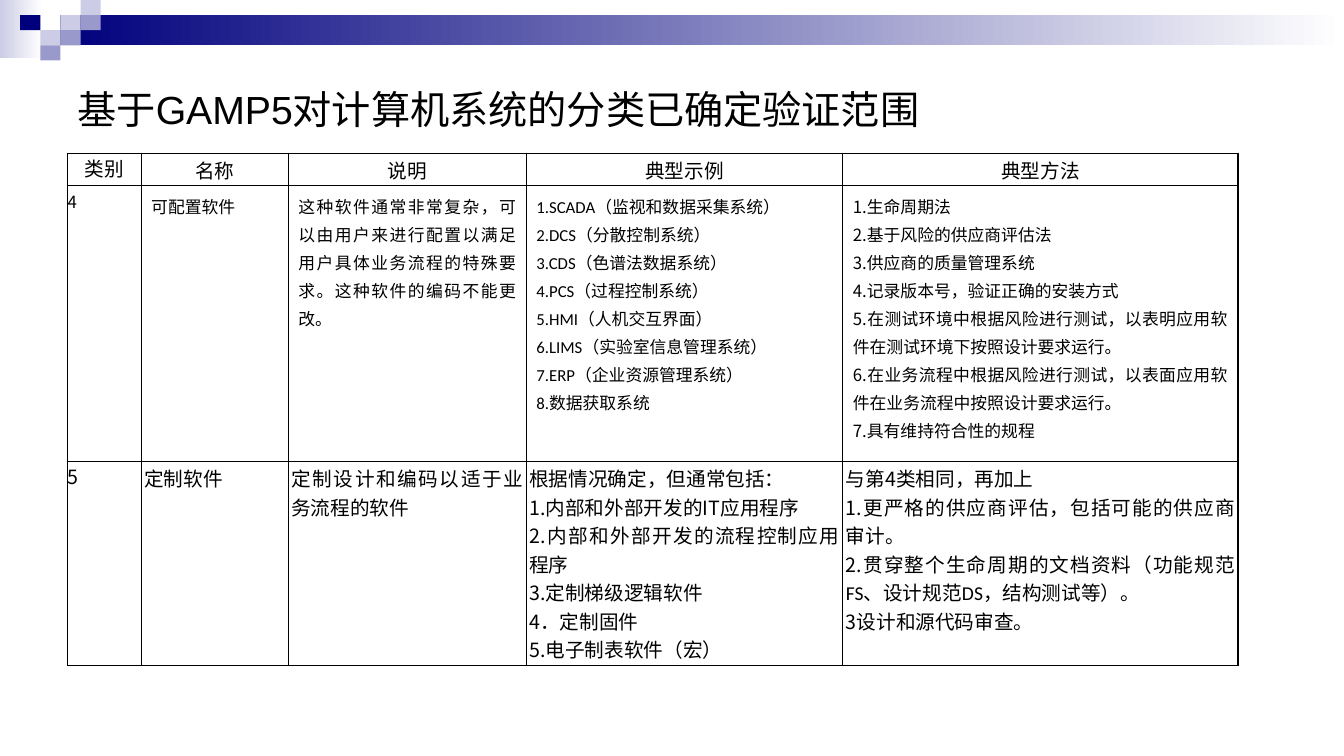
from lxml import etree
from pptx import Presentation
from pptx.dml.color import RGBColor
from pptx.enum.shapes import MSO_SHAPE
from pptx.enum.text import MSO_ANCHOR, PP_ALIGN
from pptx.oxml.ns import qn
from pptx.util import Inches, Pt

RECTANGLE = MSO_SHAPE.RECTANGLE
MIDDLE = MSO_ANCHOR.MIDDLE
CENTER, JUSTIFY = PP_ALIGN.CENTER, PP_ALIGN.JUSTIFY

BLACK = RGBColor(0x00, 0x00, 0x00)
WHITE = RGBColor(0xFF, 0xFF, 0xFF)
NAVY = RGBColor(0x00, 0x00, 0x7D)
LAVENDER = RGBColor(0xCC, 0xCC, 0xE6)
PERIWINKLE = RGBColor(0x99, 0x99, 0xCC)

CJK_FONT = "Noto Sans CJK SC"
SLIDE_W, SLIDE_H = 13.33, 7.5
TILE_W, TILE_H = 0.2, 0.15

# Column, row and colour of each tile in the corner mosaic
TILES = [
    (3, 1, LAVENDER), (4, 0, LAVENDER), (4, 1, PERIWINKLE), (2, 2, LAVENDER),
    (1, 1, NAVY), (3, 2, PERIWINKLE), (2, 3, PERIWINKLE),
]

TITLE = "基于GAMP5对计算机系统的分类已确定验证范围"
COLUMN_WIDTHS = [0.73, 1.46, 2.36, 3.14, 3.92]
ROW_HEIGHTS = [0.32, 2.74, 2.02]
NO_INSET, THIN_INSET, WIDE_INSET = (0, 0), (0.03, 0.02), (0.1, 0.05)

# Lines are paragraphs; "|" separates runs, and all-ASCII runs use the CJK font
ROWS = [
    ["类别", "名称", "说明", "典型示例", "典型方法"],
    [
        "4",
        "可配置软件",
        "这种软件通常非常复杂，可以由用户来进行配置以满足用户具体业务流程的特殊要求。"
        "这种软件的编码不能更改。",
        """1.SCADA（监视和数据采集系统）
2.DCS（分散控制系统）
3.CDS（色谱法数据系统）
4.PCS（过程控制系统）
5.HMI（人机交互界面）
6.LIMS（实验室信息管理系统）
7.ERP（企业资源管理系统）
8.数据获取系统""",
        """1.|生命周期法
2.|基于风险的供应商评估法
3.|供应商的质量管理系统
4.|记录版本号，验证正确的安装方式
5.|在测试环境中根据风险进行测试，以表明应用软件在测试环境下按照设计要求运行。
6.|在业务流程中根据风险进行测试，以表面应用软件在业务流程中按照设计要求运行。
7.|具有维持符合性的规程""",
    ],
    [
        "5",
        "定制软件",
        "定制设计和编码以适于业务流程的软件",
        """根据情况确定，但通常包括：
1.|内部和外部开发的|IT|应用程序
2.|内部和外部开发的流程控制应用程序
3.|定制梯级逻辑软件
4|．定制固件
5.|电子制表软件（宏）""",
        """与第|4|类相同，再加上
1.|更严格的供应商评估，包括可能的供应商审计。
2.|贯穿整个生命周期的文档资料（功能规范FS、设计规范DS，结构测试等）。
3|设计和源代码审查。""",
    ],
]
ROW_FORMATS = [
    {"size": 14, "align": CENTER, "spacing": None, "inset": THIN_INSET, "fill": WHITE},
    {"size": 12, "align": JUSTIFY, "spacing": Pt(20), "inset": WIDE_INSET, "fill": None},
    {"size": 14, "align": JUSTIFY, "spacing": None, "inset": THIN_INSET, "fill": None},
]


def add_run(paragraph, text, size, latin):
    run = paragraph.add_run()
    run.text = text
    for name, value in {"size": Pt(size), "name": latin}.items():
        setattr(run.font, name, value)
    run.font.color.rgb = BLACK
    etree.SubElement(run.font._element, qn("a:ea"), typeface=CJK_FONT)


def add_block(slide, left, top, width, height, *colors):
    """Add a borderless rectangle; two colours make a left-to-right gradient."""
    block = slide.shapes.add_shape(
        RECTANGLE, Inches(left), Inches(top), Inches(width), Inches(height))
    block.shadow.inherit = False
    block.line.fill.background()
    if len(colors) == 1:
        block.fill.solid()
        block.fill.fore_color.rgb = colors[0]
    else:
        block.fill.gradient()
        block.fill.gradient_angle = 0
        for stop, color in zip(block.fill.gradient_stops, colors):
            stop.color.rgb = color


def add_banner(slide, left, top, width):
    bar_left = 3 * TILE_W
    add_block(slide, left, top, 0.42, 0.58, LAVENDER, WHITE)
    add_block(slide, left + bar_left, top + TILE_H, width - bar_left, 2 * TILE_H,
              NAVY, WHITE)
    for column, row, color in TILES:
        add_block(slide, left + column * TILE_W, top + row * TILE_H,
                  TILE_W, TILE_H, color)


def add_title(slide, left, top, width, height):
    title = slide.shapes.add_textbox(
        Inches(left), Inches(top), Inches(width), Inches(height)).text_frame
    title.word_wrap = True
    title.vertical_anchor = MIDDLE
    add_run(title.paragraphs[0], TITLE, 28, "Arial")


def add_borders(cell):
    properties = cell._tc.get_or_add_tcPr()
    for side in ("lnL", "lnR", "lnT", "lnB"):
        line = etree.SubElement(properties, qn(f"a:{side}"), w=str(Pt(1)))
        solid = etree.SubElement(line, qn("a:solidFill"))
        etree.SubElement(solid, qn("a:srgbClr"), val=str(BLACK))


def fill_cell(cell, content, style, inset):
    add_borders(cell)
    if style["fill"] is None:
        cell.fill.background()
    else:
        cell.fill.solid()
        cell.fill.fore_color.rgb = style["fill"]
    across, down = map(Inches, inset)
    margins = {"left": across, "right": across, "top": down, "bottom": down}
    for side, margin in margins.items():
        setattr(cell, f"margin_{side}", margin)
    for index, line in enumerate(content.split("\n")):
        frame = cell.text_frame
        paragraph = frame.add_paragraph() if index else frame.paragraphs[0]
        paragraph.alignment = style["align"]
        paragraph.line_spacing = style["spacing"]
        for part in line.split("|"):
            add_run(paragraph, part, style["size"],
                    CJK_FONT if part.isascii() else "Calibri")


def add_category_table(slide, left, top):
    table = slide.shapes.add_table(
        len(ROWS), len(COLUMN_WIDTHS), Inches(left), Inches(top),
        Inches(sum(COLUMN_WIDTHS)), Inches(sum(ROW_HEIGHTS))).table
    table.first_row = table.horz_banding = False
    for column, width in zip(table.columns, COLUMN_WIDTHS):
        column.width = Inches(width)
    for row, height, contents, style in zip(
            table.rows, ROW_HEIGHTS, ROWS, ROW_FORMATS):
        row.height = Inches(height)
        for index, (cell, content) in enumerate(zip(row.cells, contents)):
            fill_cell(cell, content, style, style["inset"] if index else NO_INSET)


def main():
    deck = Presentation()
    deck.slide_width, deck.slide_height = Inches(SLIDE_W), Inches(SLIDE_H)
    slide = deck.slides.add_slide(deck.slide_layouts[6])
    add_banner(slide, 0, 0, SLIDE_W)
    add_title(slide, 0.67, 0.49, 12, 1.17)
    add_category_table(slide, 0.67, 1.52)
    deck.save("out.pptx")


if __name__ == "__main__":
    main()
